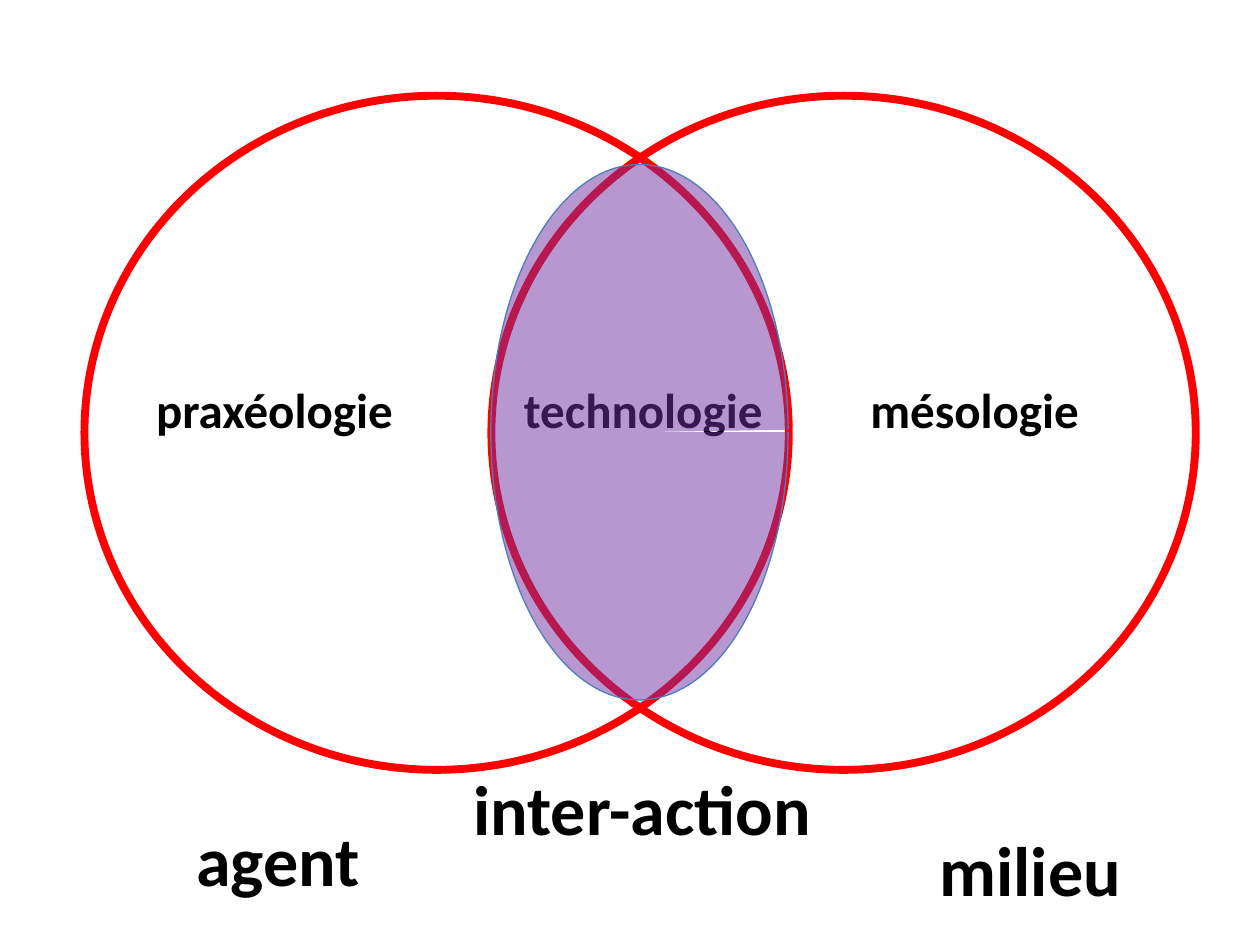
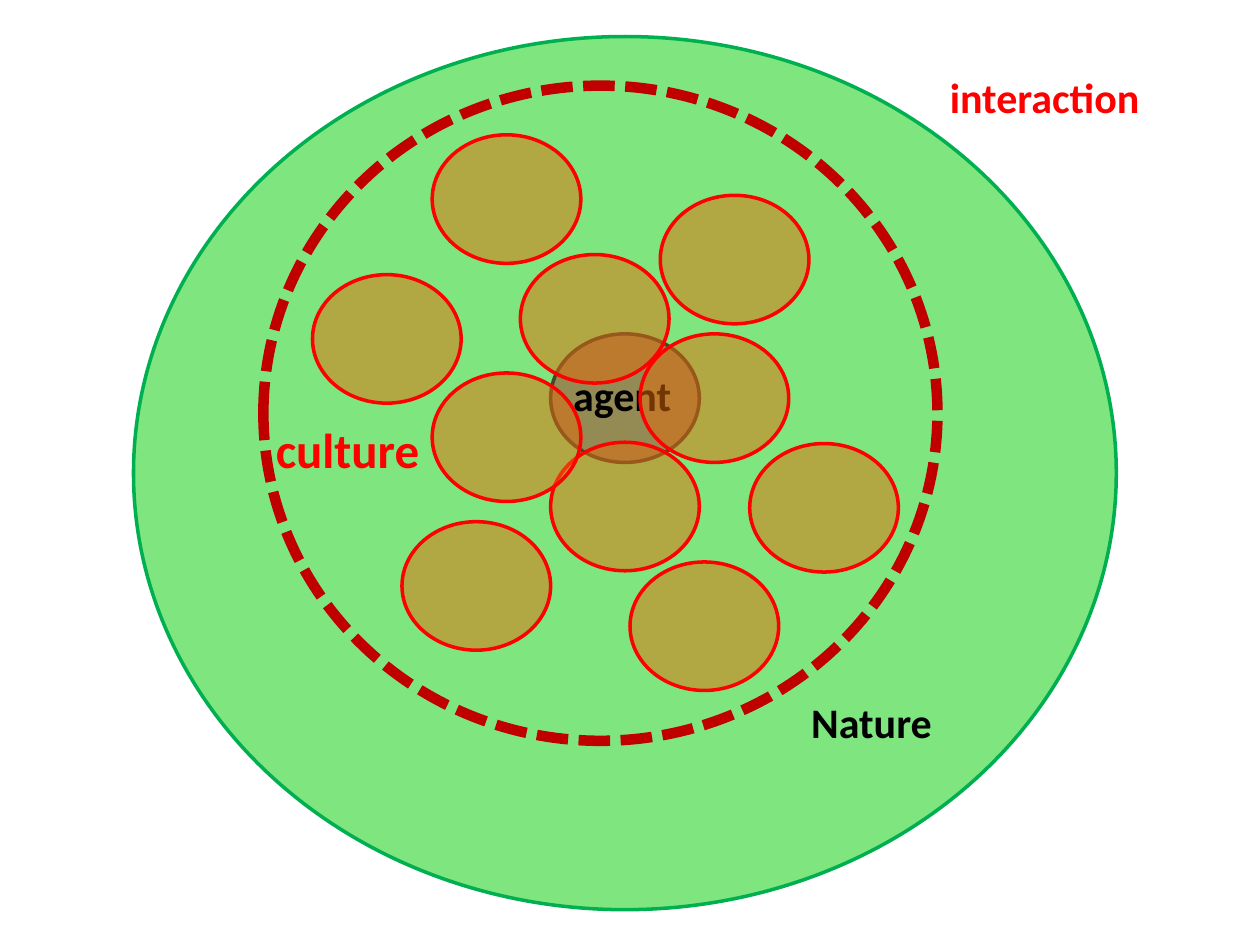
import dataclasses
import pptx
import pptx.dml.color
import pptx.enum.dml
import pptx.enum.shapes
import pptx.util
import lxml.etree
from pptx.oxml.ns import qn

COLS, ROWS = 10, 7.5
CELL = pptx.util.Inches(1)
KIND = pptx.enum.shapes.MSO_SHAPE
DASH = pptx.enum.dml.MSO_LINE


@dataclasses.dataclass(frozen=True)
class Theme:
    font: str = "Calibri"
    black: str = "000000"
    red: str = "FF0000"
    ring: str = "C00000"
    purple: str = "7030A0"
    blue: str = "4B7EBC"
    green: str = "00CC00"
    leaf: str = "00B050"
    khaki: str = "948A54"
    olive: str = "4A452A"
    orange: str = "E46C0A"
    large: int = 40
    mid: int = 28
    small: int = 24
    clear: int = 50


THEME = Theme()


def cells(*sizes):
    """Turn columns and rows of the slide grid into lengths."""
    return [round(size * CELL) for size in sizes]


def tint(code):
    return pptx.dml.color.RGBColor.from_string(code)


def outline(shape, color, width, dash=None):
    shape.line.color.rgb = tint(color)
    shape.line.width = pptx.util.Pt(width)
    if dash:
        shape.line.dash_style = dash


def paint(shape, color, alpha=None):
    """Fill a shape, or leave it hollow when there is no color."""
    if not color:
        shape.fill.background()
        return
    shape.fill.solid()
    shape.fill.fore_color.rgb = tint(color)
    if alpha:
        node = shape.fill._xPr.find(qn("a:solidFill"))[0]
        lxml.etree.SubElement(node, qn("a:alpha"), val=str(alpha * 1000))


def oval(shapes, box, line, width, fill=None, alpha=None, dash=None,
         kind=KIND.OVAL):
    shape = shapes.add_shape(kind, *cells(*box))
    shape.shadow.inherit = False
    paint(shape, fill, alpha)
    outline(shape, line, width, dash)
    return shape


def label(shapes, box, text, size, color=THEME.black):
    frame = shapes.add_textbox(*cells(*box)).text_frame
    frame.word_wrap = True
    run = frame.paragraphs[0].add_run()
    run.text = text
    run.font.name = THEME.font
    run.font.size = pptx.util.Pt(size)
    run.font.bold = True
    run.font.color.rgb = tint(color)


def lens(shapes, box):
    """Draw the shaded overlap as an almost full arc, turned upright."""
    arc = oval(shapes, box, THEME.blue, 0.75, THEME.purple, THEME.clear,
               kind=KIND.ARC)
    arc.adjustments[0] = 162
    arc.adjustments[1] = 161.425
    arc.rotation = 90


def draw_fields(shapes):
    for left in (0.67, 3.9):
        oval(shapes, (left, 0.76, 5.59, 5.35), THEME.red, 4.5)
    for text, left, top, width in (("agent", 1.46, 6.43, 1.81),
                                   ("milieu", 7.36, 6.51, 1.81),
                                   ("inter-action", 3.66, 6.03, 2.91)):
        label(shapes, (left, top, width, 0.77), text, THEME.large)
    for text, left, width in (("praxéologie", 1.14, 2.44),
                              ("technologie", 4.06, 2.13),
                              ("mésologie", 6.81, 2.28)):
        label(shapes, (left, 2.96, width, 0.57), text, THEME.mid)
    lens(shapes, (2.95, 2.25, 4.25, 2.36))


def draw_nature(shapes):
    disc = (1.18, 1.02)
    oval(shapes, (1.06, 0.29, 7.8, 6.93), THEME.leaf, 2,
         THEME.green, THEME.clear)
    agent = shapes.add_group_shape().shapes
    oval(agent, (4.37, 2.65, *disc), THEME.olive, 2, THEME.khaki)
    label(agent, (4.45, 2.88, 1.02, 0.5), "agent", THEME.small)
    label(shapes, (6.34, 5.48, 1.26, 0.5), "Nature", THEME.small)
    label(shapes, (7.44, 0.52, 2.13, 0.5), "interaction", THEME.small,
          THEME.red)
    for spot in ((5.08, 2.65), (4.13, 2.02), (5.24, 1.55), (5.95, 3.52),
                 (4.37, 3.51), (3.43, 2.96), (2.48, 2.18), (5, 4.46),
                 (3.19, 4.14), (3.43, 1.07)):
        oval(shapes, (*spot, *disc), THEME.red, 2, THEME.orange, THEME.clear)
    oval(shapes, (2.09, 0.68, 5.35, 5.2), THEME.ring, 6,
         dash=DASH.SQUARE_DOT)
    # The preset for short dashes has no public name of its own.
    ring = shapes[-1].line._ln.find(qn("a:prstDash"))
    ring.set("val", "sysDash")
    label(shapes, (2.09, 3.28, 1.89, 0.57), "culture", THEME.mid, THEME.red)


def main():
    deck = pptx.Presentation()
    deck.slide_width, deck.slide_height = cells(COLS, ROWS)
    for draw in (draw_fields, draw_nature):
        draw(deck.slides.add_slide(deck.slide_layouts[6]).shapes)
    deck.save("out.pptx")


if __name__ == "__main__":
    main()
